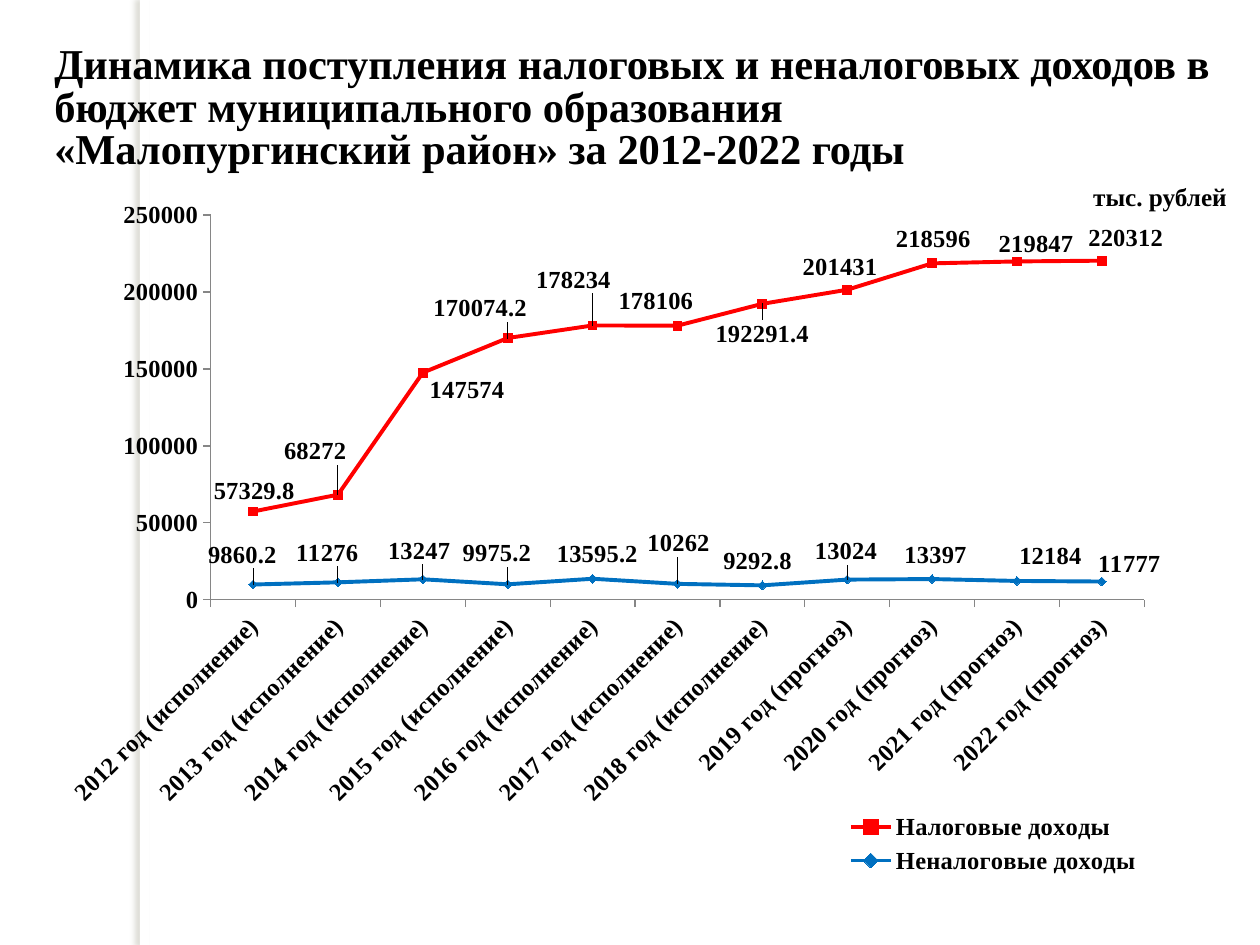
"""Build the slide on tax and non-tax revenue of a municipal district."""
from lxml import etree
from pptx import Presentation
from pptx.chart.data import CategoryChartData
from pptx.dml.color import RGBColor
from pptx.enum.chart import (XL_CHART_TYPE, XL_LABEL_POSITION, XL_LEGEND_POSITION,
                             XL_MARKER_STYLE, XL_TICK_MARK)
from pptx.enum.shapes import MSO_SHAPE
from pptx.enum.text import MSO_ANCHOR, MSO_AUTO_SIZE, PP_ALIGN
from pptx.oxml import parse_xml
from pptx.oxml.ns import nsdecls, qn
from pptx.util import Pt

LINE_MARKERS = XL_CHART_TYPE.LINE_MARKERS
CENTER = XL_LABEL_POSITION.CENTER
OUTSIDE, NO_TICK = XL_TICK_MARK.OUTSIDE, XL_TICK_MARK.NONE
SQUARE, DIAMOND = XL_MARKER_STYLE.SQUARE, XL_MARKER_STYLE.DIAMOND
BLACK = RGBColor(0, 0, 0)
WHITE = RGBColor(255, 255, 255)
RED = RGBColor(255, 0, 0)
BLUE = RGBColor(0, 0x70, 0xC0)
GRAY = RGBColor(0x86, 0x86, 0x86)
CHART_WIDTH, CHART_HEIGHT = 684, 414
CHART_FONT = {"name": "Times New Roman", "size": Pt(14), "bold": True}


def format_font(font, values):
    """Apply a dict of values and the black text colour to a font."""
    for key, value in values.items():
        setattr(font, key, value)
    font.color.rgb = BLACK


def manual_layout(**values):
    """Return a chart layout element with the given settings."""
    layout = parse_xml(f"<c:layout {nsdecls('c')}/>")
    manual = etree.SubElement(layout, qn("c:manualLayout"))
    for key, value in values.items():
        etree.SubElement(manual, qn(f"c:{key}")).set("val", str(value))
    return layout


prs = Presentation()
prs.slide_width, prs.slide_height = Pt(720), Pt(540)
slide = prs.slides.add_slide(prs.slide_layouts[5])

strip = slide.shapes.add_shape(MSO_SHAPE.RECTANGLE, Pt(80), Pt(0), Pt(5.6), Pt(540))
strip.fill.solid()
strip.fill.fore_color.rgb = WHITE
strip.line.fill.background()
strip.element.spPr.append(parse_xml(
    f'<a:effectLst {nsdecls("a")}><a:outerShdw blurRad="{Pt(3)}" dist="{Pt(3)}" dir="10800000">'
    '<a:srgbClr val="7F7D63"><a:alpha val="25000"/></a:srgbClr></a:outerShdw></a:effectLst>'))
slide.shapes.element.insert(2, strip.element)

heading = slide.shapes.title
for key, value in {"left": 23.8, "top": 18, "width": 696.2, "height": 84}.items():
    setattr(heading, key, Pt(value))
heading_frame = heading.text_frame
for key, value in {"auto_size": MSO_AUTO_SIZE.NONE, "vertical_anchor": MSO_ANCHOR.TOP,
                   "word_wrap": True, "margin_left": Pt(7.2), "margin_right": Pt(19),
                   "margin_top": Pt(7.7), "margin_bottom": Pt(0)}.items():
    setattr(heading_frame, key, value)
heading_lines = [
    ("Динамика поступления налоговых и неналоговых доходов в бюджет муниципального образования\v"
     "«Малопургинский район» за 2012-2022 годы", 24.3, PP_ALIGN.LEFT, 0),
    ("тыс. рублей", 14.4, PP_ALIGN.RIGHT, 7),
]
heading_frame.add_paragraph()
for paragraph, (text, size, alignment, gap) in zip(heading_frame.paragraphs, heading_lines):
    paragraph.text = text
    paragraph.alignment = alignment
    paragraph.line_spacing = 0.84
    paragraph.space_before = Pt(gap)
    for run in paragraph.runs:
        format_font(run.font, {"name": "Times New Roman", "size": Pt(size), "bold": True})

revenues = [
    ("Налоговые доходы", RED, SQUARE,
     [57329.8, 68272, 147574, 170074.2, 178234, 178106, 192291.4, 201431, 218596, 219847, 220312],
     [(1, -12), (-13, -25), (25, 10), (-16, -17), (-11, -26), (-12, -14), (0, 17),
      (-4, -13), (1, -14), (11, -10), (14, -13)]),
    ("Неналоговые доходы", BLUE, DIAMOND,
     [9860.2, 11276, 13247, 9975.2, 13595.2, 10262, 9292.8, 13024, 13397, 12184, 11777],
     [(-6, -17), (-6, -17), (-2, -16), (-6, -18), (3, -14), (1, -23), (-3, -14),
      (-1, -16), (2, -14), (19, -14), (16, -10)]),
]
revenue_data = CategoryChartData()
revenue_data.categories = [
    f"{year} год ({'исполнение' if year < 2019 else 'прогноз'})" for year in range(2012, 2023)]
for name, _, _, amounts, _ in revenues:
    revenue_data.add_series(name, amounts)
chart = slide.shapes.add_chart(LINE_MARKERS, Pt(0), Pt(113.8), Pt(CHART_WIDTH),
                               Pt(CHART_HEIGHT), revenue_data).chart
format_font(chart.font, CHART_FONT)
chart.has_title = False

plot_area = chart.plots[0].series[0]._element.getparent().getparent()
for old_layout in plot_area.findall(qn("c:layout")):
    plot_area.remove(old_layout)
plot_area.insert(0, manual_layout(layoutTarget="inner", xMode="edge", yMode="edge",
                                  x=0.176, y=0.022, w=0.78, h=0.531))

for axis in (chart.category_axis, chart.value_axis):
    axis.has_major_gridlines = False
    axis.major_tick_mark = OUTSIDE
    axis.minor_tick_mark = NO_TICK
    axis.format.line.color.rgb = GRAY
    format_font(axis.tick_labels.font, CHART_FONT)
chart.category_axis._element.find(qn("c:txPr")).find(qn("a:bodyPr")).set("rot", "-2700000")
for key, value in {"minimum_scale": 0, "maximum_scale": 250000, "major_unit": 50000}.items():
    setattr(chart.value_axis, key, value)

for series, (_, color, marker_style, _, label_offsets) in zip(chart.plots[0].series, revenues):
    series.smooth = False
    series.format.line.color.rgb = color
    series.format.line.width = Pt(2.25)
    series.marker.style = marker_style
    series.marker.size = 5
    series.marker.format.fill.solid()
    series.marker.format.fill.fore_color.rgb = color
    series.marker.format.line.color.rgb = color
    for index, (dx, dy) in enumerate(label_offsets):
        label = series.points[index].data_label
        format_font(label.font, CHART_FONT)
        label.position = CENTER
        series.data_labels._element.findall(qn("c:dLbl"))[index].insert(
            1, manual_layout(x=round(dx / CHART_WIDTH, 3), y=round(dy / CHART_HEIGHT, 3)))
    series.data_labels.show_value = True

chart.has_legend = True
legend = chart.legend
legend.position = XL_LEGEND_POSITION.RIGHT
legend.include_in_layout = False
format_font(legend.font, CHART_FONT)
for old_layout in legend._element.findall(qn("c:layout")):
    legend._element.remove(old_layout)
legend._element.insert(1, manual_layout(xMode="edge", yMode="edge", x=0.7, y=0.84, w=0.26, h=0.1))

prs.save("out.pptx")
